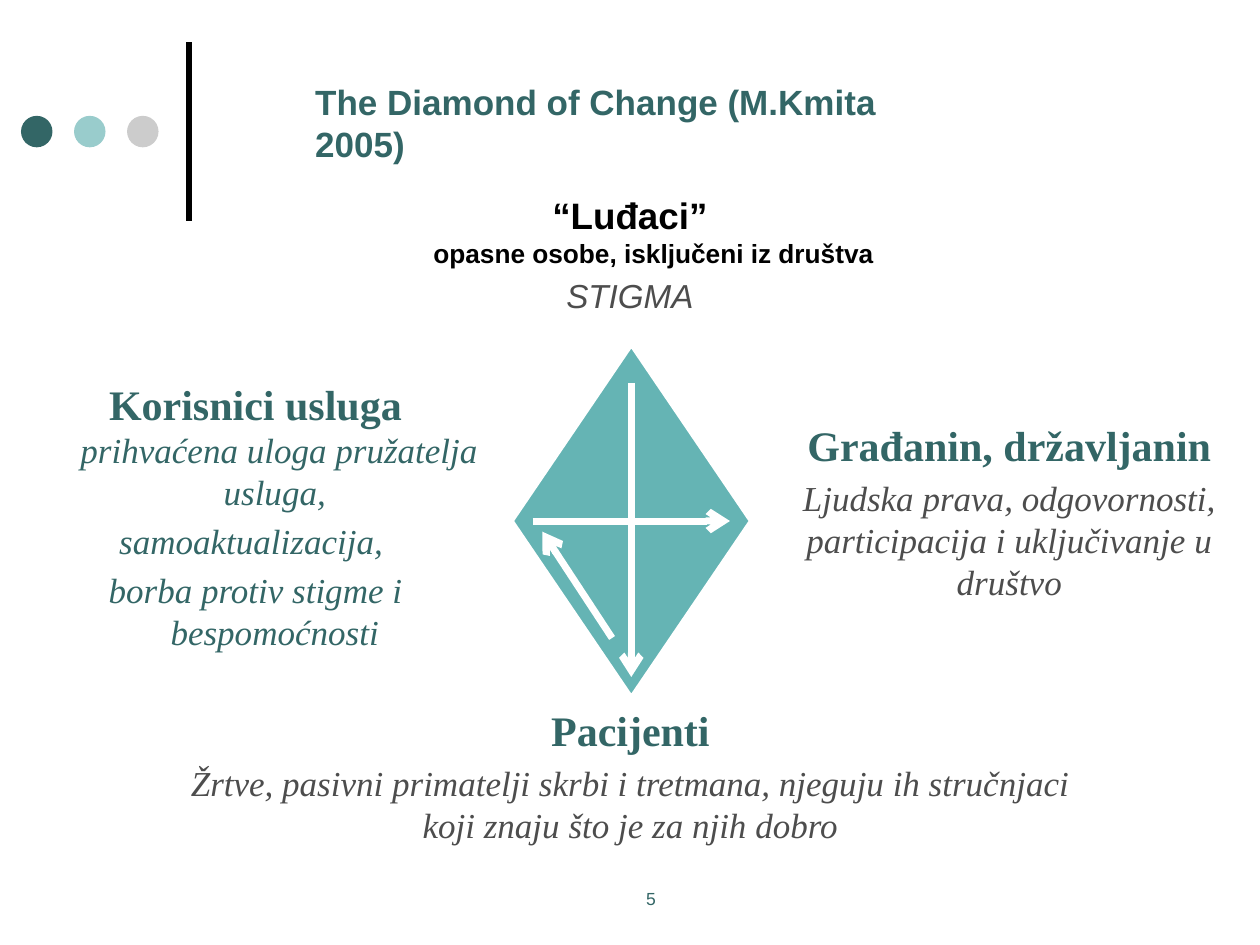
from pptx import Presentation
from pptx.dml.color import RGBColor
from pptx.enum.shapes import MSO_CONNECTOR, MSO_SHAPE
from pptx.enum.text import MSO_ANCHOR, PP_ALIGN
from pptx.oxml.ns import qn
from pptx.util import Pt
from lxml.etree import SubElement

TEAL = RGBColor(0x33, 0x66, 0x66)
AQUA = RGBColor(0x99, 0xCC, 0xCC)
SILVER = RGBColor(0xCC, 0xCC, 0xCC)
JADE = RGBColor(0x65, 0xB4, 0xB4)
GREY = RGBColor(0x4D, 0x4D, 0x4D)
BLACK = RGBColor(0, 0, 0)
WHITE = RGBColor(255, 255, 255)

SANS, SERIF = "Arial", "Times New Roman"
HEAD = dict(name=SERIF, size=Pt(24), bold=True, color=TEAL)
NOTE = dict(name=SERIF, size=Pt(20), italic=True, color=GREY)
ROLE = NOTE | dict(color=TEAL)
TITLE = dict(name=SANS, size=Pt(20), bold=True, color=TEAL)
LABEL = dict(name=SANS, size=Pt(21), bold=True, color=BLACK)
SUB = LABEL | dict(size=Pt(15))
STIGMA = dict(name=SANS, size=Pt(19), italic=True, color=GREY)
PAGE = dict(name=SANS, size=Pt(10), color=TEAL)


def style(font, look):
    for key, val in look.items():
        if key == "color":
            font.color.rgb = val
        else:
            setattr(font, key, val)


def add_text(slide, box, paras, align=PP_ALIGN.CENTER, hang=0, inset=(7.2, 3.6)):
    frame = slide.shapes.add_textbox(*map(Pt, box)).text_frame
    side, edge = map(Pt, inset)
    form = dict(word_wrap=True, vertical_anchor=MSO_ANCHOR.TOP, margin_left=side,
                margin_right=side, margin_top=edge, margin_bottom=edge)
    for key, val in form.items():
        setattr(frame, key, val)
    for num, lines in enumerate(paras):
        para = frame.add_paragraph() if num else frame.paragraphs[0]
        para.alignment = align
        if num:
            para.space_before = Pt(4)
        if hang:
            props = para._p.get_or_add_pPr()
            props.set("marL", str(Pt(hang)))
            props.set("indent", str(-Pt(hang)))
        for row, (words, look) in enumerate(lines):
            if row:
                para.add_line_break()
            run = para.add_run()
            run.text = words
            style(run.font, look)


def add_form(slide, kind, box, fill, edge=None):
    shape = slide.shapes.add_shape(kind, *map(Pt, box))
    shape.shadow.inherit = False
    shape.fill.solid()
    shape.fill.fore_color.rgb = fill
    if edge:
        shape.line.color.rgb = edge
        shape.line.width = Pt(3)
    else:
        shape.line.fill.background()


def add_line(slide, ends, color, width, arrow=False):
    line = slide.shapes.add_connector(MSO_CONNECTOR.STRAIGHT, *map(Pt, ends))
    line.line.color.rgb = color
    line.line.width = Pt(width)
    if arrow:
        SubElement(line.line._get_or_add_ln(), qn("a:tailEnd"), type="arrow")
    SubElement(line._element.spPr, qn("a:effectLst"))


def add_mark(slide, box):
    left, top, width, height = box
    add_line(slide, (left + width, top + height, left + width, top), BLACK, 3)
    for num, fill in enumerate((TEAL, AQUA, SILVER)):
        add_form(slide, MSO_SHAPE.OVAL, (left + num * 30.3, top + 42.2, 18, 18), fill)


def add_gem(slide, box):
    left, top, width, height = box
    add_form(slide, MSO_SHAPE.DIAMOND, box, JADE, WHITE)
    arrows = ((0.5, 0.11, 0.5, 0.94), (0.09, 0.5, 0.91, 0.5), (0.42, 0.83, 0.13, 0.53))
    for x1, y1, x2, y2 in arrows:
        ends = (left + x1 * width, top + y1 * height,
                left + x2 * width, top + y2 * height)
        add_line(slide, ends, WHITE, 4, arrow=True)


def main():
    deck = Presentation()
    deck.slide_width, deck.slide_height = Pt(720), Pt(540)
    slide = deck.slides.add_slide(deck.slide_layouts[6])
    add_mark(slide, (12, 24, 96, 102))
    add_text(slide, (258, 504, 228, 24), [[("5", PAGE)]])
    add_text(slide, (133, 106.6, 454, 83.5), [
        [("“Luđaci”", LABEL), ("opasne osobe, isključeni iz društva", SUB)],
        [("STIGMA", STIGMA)],
    ], hang=27)
    add_text(slide, (0, 213, 292, 193), [
        [("Korisnici usluga", HEAD), ("prihvaćena uloga pružatelja usluga, ", ROLE)],
        [("samoaktualizacija, ", ROLE)],
        [("borba protiv stigme i bespomoćnosti ", ROLE)],
    ], hang=27, inset=(3, 3))
    add_text(slide, (433.5, 236, 286.5, 113), [
        [("Građanin, državljanin", HEAD)],
        [("Ljudska prava, odgovornosti, participacija i uključivanje u društvo", NOTE)],
    ])
    add_text(slide, (101.5, 399, 517.5, 88.5), [
        [("Pacijenti", HEAD)],
        [("Žrtve, pasivni primatelji skrbi i tretmana, njeguju ih stručnjaci "
          "koji znaju što je za njih dobro", NOTE)],
    ])
    add_gem(slide, (292, 196.5, 137.5, 202.5))
    add_text(slide, (173, 42.5, 367, 55),
             [[("The Diamond of Change (M.Kmita 2005)", TITLE)]], PP_ALIGN.LEFT)
    deck.save("out.pptx")


if __name__ == "__main__":
    main()
